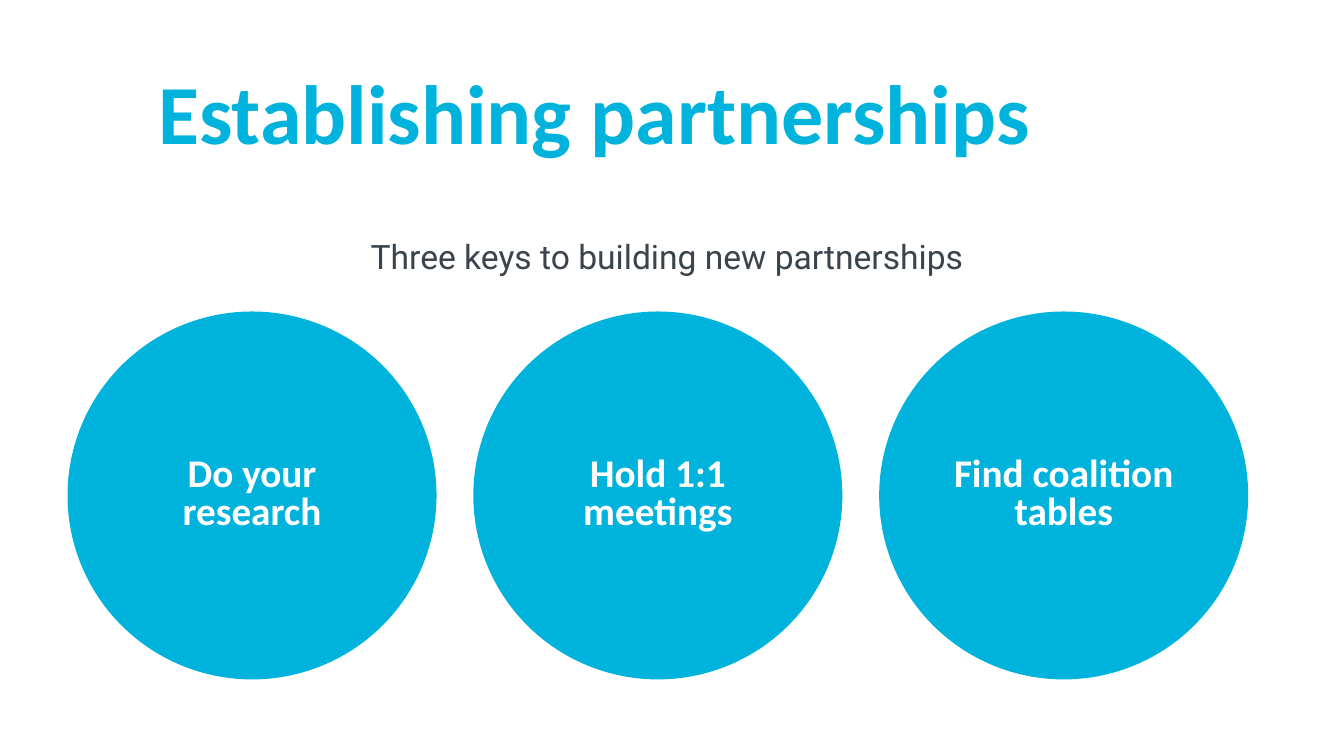
from pptx import Presentation
from pptx.dml.color import RGBColor
from pptx.enum import shapes, text
from pptx.util import Inches, Pt

CYAN = RGBColor(0x00, 0xB3, 0xDC)
SLATE = RGBColor(0x3B, 0x44, 0x4D)
WHITE = RGBColor(0xFF, 0xFF, 0xFF)

HEADING = "Establishing partnerships"
SUBHEADING = "Three keys to building new partnerships"
KEYS = ["Do your research", "Hold 1:1 meetings", "Find coalition tables"]

KEY_LEFT, KEY_TOP = 0.67, 3.09
KEY_WIDTH, KEY_HEIGHT = 3.66, 3.65
KEY_PITCH = 4.025


def write(frame, words, font_name, size, color, bold, align, spacing, anchor):
    frame.word_wrap = True
    frame.auto_size = text.MSO_AUTO_SIZE.NONE
    frame.vertical_anchor = anchor
    frame.margin_left = frame.margin_right = Inches(0.1)
    frame.margin_top = frame.margin_bottom = Inches(0.05)
    paragraph = frame.paragraphs[0]
    paragraph.alignment = align
    paragraph.line_spacing = spacing
    paragraph.space_before = Pt(0)
    run = paragraph.add_run()
    run.text = words
    run.font.name = font_name
    run.font.size = Pt(size)
    run.font.bold = bold
    run.font.color.rgb = color


def main():
    deck = Presentation()
    deck.slide_width, deck.slide_height = Inches(13.33), Inches(7.5)
    slide = deck.slides.add_slide(deck.slide_layouts[5])

    heading = slide.shapes.title
    heading.left, heading.top = Inches(1.47), Inches(0.74)
    heading.width, heading.height = Inches(10.29), Inches(0.93)
    write(heading.text_frame, HEADING, "Calibri", 60, CYAN, True,
          text.PP_ALIGN.LEFT, 0.8, text.MSO_ANCHOR.TOP)

    subheading = slide.shapes.add_textbox(
        Inches(2.24), Inches(2.29), Inches(8.75), Inches(0.5))
    write(subheading.text_frame, SUBHEADING, "Roboto", 24, SLATE, False,
          text.PP_ALIGN.CENTER, 1.0, text.MSO_ANCHOR.TOP)

    for index, words in enumerate(KEYS):
        key = slide.shapes.add_shape(
            shapes.MSO_SHAPE.OVAL,
            Inches(KEY_LEFT + index * KEY_PITCH), Inches(KEY_TOP),
            Inches(KEY_WIDTH), Inches(KEY_HEIGHT))
        key.shadow.inherit = False
        key.fill.solid()
        key.fill.fore_color.rgb = CYAN
        key.line.fill.background()
        write(key.text_frame, words, "Calibri", 28, WHITE, True,
              text.PP_ALIGN.CENTER, 0.8, text.MSO_ANCHOR.MIDDLE)

    deck.save("out.pptx")


if __name__ == "__main__":
    main()
